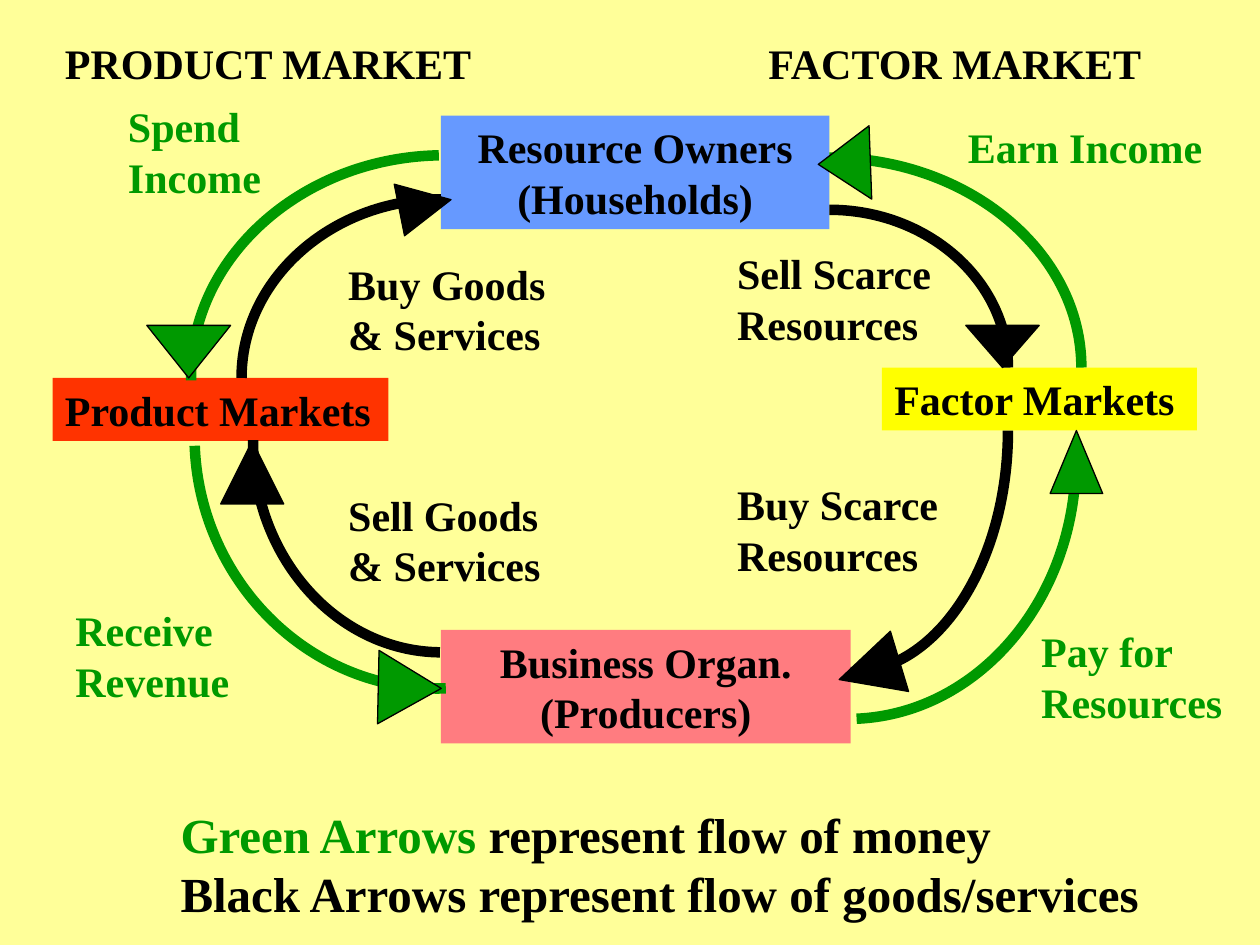
from lxml.etree import SubElement
from pptx import Presentation
from pptx.dml.color import RGBColor
from pptx.enum.shapes import MSO_SHAPE
from pptx.enum.text import MSO_ANCHOR, MSO_AUTO_SIZE, PP_ALIGN
from pptx.oxml.ns import qn
from pptx.util import Cm, Pt

THEME = {
    "font": "Times New Roman",
    "label": Pt(24), "legend": Pt(28), "arc": Pt(6), "edge": Pt(0.75),
    "paper": RGBColor(0xFF, 0xFF, 0x99),
    "money": RGBColor(0x00, 0x99, 0x00), "goods": RGBColor(0x00, 0x00, 0x00),
    "households": RGBColor(0x66, 0x99, 0xFF), "producers": RGBColor(0xFF, 0x7C, 0x80),
    "factors": RGBColor(0xFF, 0xFF, 0x00), "products": RGBColor(0xFF, 0x33, 0x00),
}
ONE_LINE, TWO_LINES = 1.27, 2.29
BEND = 0.55  # control point distance of a quarter ellipse
UP, DOWN = MSO_SHAPE.FLOWCHART_EXTRACT, MSO_SHAPE.FLOWCHART_MERGE


def write(sp, parts, size=THEME["label"], align=PP_ALIGN.LEFT):
    """Fill a shape with (text, colour) parts; a newline becomes a line break."""
    tf = sp.text_frame
    frame_format = {"word_wrap": True, "vertical_anchor": MSO_ANCHOR.TOP,
                    "auto_size": MSO_AUTO_SIZE.SHAPE_TO_FIT_TEXT}
    for name, value in frame_format.items():
        setattr(tf, name, value)
    p = tf.paragraphs[0]
    p.alignment = align
    for text, colour in parts:
        for i, line in enumerate(text.split("\n")):
            if i:
                p.add_line_break()
            r = p.add_run()
            r.text = line
            for name, value in {"name": THEME["font"], "size": size, "bold": True}.items():
                setattr(r.font, name, value)
            r.font.color.rgb = THEME[colour]


def add_solid(kind, box, colour):
    sp = s.shapes.add_shape(kind, *map(Cm, box))
    sp.shadow.inherit = False
    sp.fill.solid()
    sp.fill.fore_color.rgb = THEME[colour]
    return sp


prs = Presentation()
prs.slide_width, prs.slide_height = Cm(25.4), Cm(19.05)
s = prs.slides.add_slide(prs.slide_layouts[6])
s.background.fill.solid()
s.background.fill.fore_color.rgb = THEME["paper"]

# Sectors and markets
stations = [
    ("Resource Owners\n(Households)", "households", (8.89, 2.33, 7.83, TWO_LINES), PP_ALIGN.CENTER),
    ("Business Organ.\n(Producers)", "producers", (8.89, 12.7, 8.26, TWO_LINES), PP_ALIGN.CENTER),
    ("Factor Markets", "factors", (17.78, 7.41, 6.35, ONE_LINE), PP_ALIGN.LEFT),
    ("Product Markets", "products", (1.06, 7.62, 6.77, ONE_LINE), PP_ALIGN.LEFT),
]
for text, colour, box, align in stations:
    sp = add_solid(MSO_SHAPE.RECTANGLE, box, colour)
    sp.line.fill.background()
    write(sp, [(text, "goods")], align=align)

# Each arc is a quarter ellipse from its level end to its upright end, then turned
arcs = {
    "money": [((16.72, 3.18), (21.8, 7.41), 0), ((8.89, 3.18), (3.81, 7.62), 358.9),
              ((4.02, 8.89), (8.89, 13.97), 177.8), ((21.8, 9.1), (17.15, 14.39), 177.5)],
    "goods": [((8.89, 4.02), (4.87, 7.62), 0), ((5.08, 8.89), (8.89, 13.13), 180.6),
              ((17.15, 13.55), (20.32, 8.68), 0), ((16.72, 4.23), (20.32, 7.41), 0)],
}
heads = {
    "money": [(UP, (7.52, 13.23, 1.48, 1.27), 91.2),
              (DOWN, (2.96, 6.56, 1.69, 1.06), 0),
              (DOWN, (16.28, 2.77, 1.48, 1.05), 87.9),
              (MSO_SHAPE.ISOSCELES_TRIANGLE, (21.17, 8.68, 1.06, 1.27), 0)],
    "goods": [(DOWN, (19.47, 6.56, 1.48, 0.85), 0),
              (DOWN, (16.89, 12.88, 1.27, 1.27), 73.2),
              (UP, (4.45, 8.89, 1.27, 1.27), 0),
              (UP, (8.04, 3.6, 1.06, 1.06), 78.7)],
}
for flow in arcs:
    for (x0, y0), (x1, y1), turn in arcs[flow]:
        corners = [(x0 + (x1 - x0) * BEND, y0), (x1, y1 + (y0 - y1) * (1 - BEND) / (1 - BEND) * BEND), (x1, y1)]
        builder = s.shapes.build_freeform(Cm(x0), Cm(y0))
        builder.add_line_segments([(Cm(x), Cm(y)) for x, y in corners], close=False)
        sp = builder.convert_to_shape()
        # Join the three straight steps into one Bézier curve
        outline = next(sp._element.iter(qn("a:path")))
        steps = outline.findall(qn("a:lnTo"))
        curve = SubElement(outline, qn("a:cubicBezTo"))
        for step in steps:
            curve.append(step[0])
            outline.remove(step)
        sp.shadow.inherit = False
        sp.rotation = turn
        sp.fill.background()
        sp.line.width = THEME["arc"]
        sp.line.color.rgb = THEME[flow]
    for kind, box, turn in heads[flow]:
        sp = add_solid(kind, box, flow)
        sp.rotation = turn
        sp.line.width = THEME["edge"]
        sp.line.color.rgb = THEME["goods"]

# Legend
legend = s.shapes.add_textbox(*map(Cm, (3.39, 16.09, 20.11, 2.62)))
write(legend, [("Green Arrows", "money"),
               (" represent flow of money\nBlack Arrows represent flow of goods/services", "goods")],
      THEME["legend"])

# Flow labels and headings
labels = [
    ("Earn Income", "money", (19.26, 2.33, 5.5, ONE_LINE)),
    ("Pay for Resources", "money", (20.74, 12.49, 4.66, TWO_LINES)),
    ("Receive Revenue", "money", (1.27, 12.07, 3.81, TWO_LINES)),
    ("Spend Income", "money", (2.33, 1.91, 4.45, TWO_LINES)),
    ("Buy Goods \n& Services", "goods", (6.77, 5.08, 5.5, TWO_LINES)),
    ("Sell Goods\n& Services", "goods", (6.77, 9.74, 4.66, TWO_LINES)),
    ("Sell Scarce Resources", "goods", (14.61, 4.87, 4.87, TWO_LINES)),
    ("Buy Scarce Resources", "goods", (14.61, 9.53, 4.66, TWO_LINES)),
    ("PRODUCT MARKET", "goods", (1.06, 0.64, 10.16, ONE_LINE)),
    ("FACTOR MARKET", "goods", (15.24, 0.64, 8.68, ONE_LINE)),
]
for text, colour, box in labels:
    write(s.shapes.add_textbox(*map(Cm, box)), [(text, colour)])

prs.save("out.pptx")
